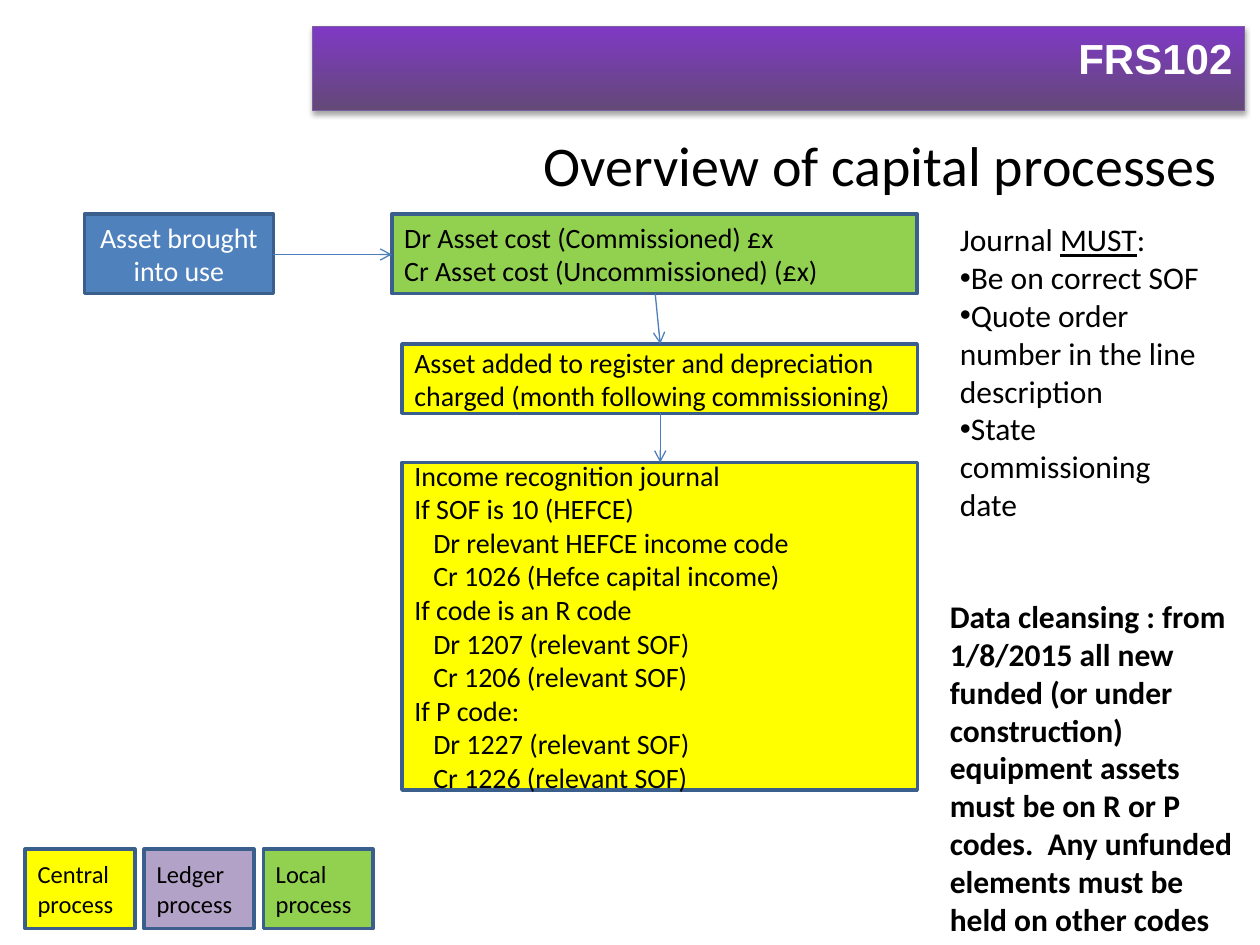
from dataclasses import dataclass

from lxml.etree import SubElement
from pptx import Presentation
from pptx.dml.color import RGBColor
from pptx.enum.shapes import MSO_CONNECTOR as Connector, MSO_SHAPE as Shape
from pptx.enum.text import MSO_ANCHOR as Anchor, PP_ALIGN as Align
from pptx.oxml.ns import qn
from pptx.util import Inches, Pt

BLACK = RGBColor(0x00, 0x00, 0x00)
WHITE = RGBColor(0xFF, 0xFF, 0xFF)
BLUE = RGBColor(0x4F, 0x81, 0xBD)
GREEN = RGBColor(0x92, 0xD0, 0x50)
YELLOW = RGBColor(0xFF, 0xFF, 0x00)
LILAC = RGBColor(0xB3, 0xA2, 0xC7)
OUTLINE = RGBColor(0x3A, 0x5F, 0x8C)
ARROW = RGBColor(0x4B, 0x7E, 0xBC)
BANNER_TOP = RGBColor(0x7F, 0x39, 0xC5)
BANNER_BOTTOM = RGBColor(0x63, 0x49, 0x77)
BANNER_LINE = RGBColor(0x7D, 0x60, 0xA0)

ENTRY_INDENT = Inches(0.15)


@dataclass
class Process:
    left: float
    top: float
    width: float
    height: float
    fill: RGBColor
    lines: list[str]
    size: int = 16
    color: RGBColor = BLACK
    align: Align = Align.LEFT
    entries: tuple[str, ...] = ()  # prefixes of the indented lines


@dataclass
class Arrow:
    start: tuple[float, float]
    end: tuple[float, float]


JOURNAL = [
    "Income recognition journal",
    "If SOF is 10 (HEFCE)",
    "Dr relevant HEFCE income code",
    "Cr 1026 (Hefce capital income)",
    "If code is an R code",
    "Dr 1207 (relevant SOF)",
    "Cr 1206 (relevant SOF)",
    "If P code:",
    "Dr 1227 (relevant SOF)",
    "Cr 1226 (relevant SOF)",
]
PROCESSES = [
    Process(0.67, 1.7, 1.5, 0.63, BLUE, ["Asset brought into use"],
            color=WHITE, align=Align.CENTER),
    Process(3.11, 1.7, 4.17, 0.63, GREEN,
            ["Dr Asset cost (Commissioned) £x", "Cr Asset cost (Uncommissioned) (£x)"]),
    Process(3.19, 2.73, 4.09, 0.55, YELLOW,
            ["Asset added to register and depreciation charged (month following commissioning)"]),
    Process(3.19, 3.67, 4.09, 2.6, YELLOW, JOURNAL, entries=("Dr", "Cr")),
]
KEY = [("Central process", YELLOW), ("Ledger process", LILAC), ("Local process", GREEN)]
ARROWS = [
    Arrow((2.17, 2.02), (3.11, 2.02)),
    Arrow((5.2, 2.33), (5.24, 2.73)),
    Arrow((5.24, 3.28), (5.24, 3.67)),
]
JOURNAL_RULES = [
    "Be on correct SOF",
    "Quote order number in the line description",
    "State commissioning date",
]
DATA_CLEANSING = (
    "Data cleansing : from 1/8/2015 all new funded (or under construction) "
    "equipment assets must be on R or P codes.  Any unfunded elements must be "
    "held on other codes"
)


def style(font, size: int, color: RGBColor = BLACK, name: str = "Calibri", bold: bool = False):
    font.size, font.name, font.bold = Pt(size), name, bold
    font.color.rgb = color


def add_banner(page):
    banner = page.shapes.add_shape(
        Shape.RECTANGLE, Inches(2.48), Inches(0.21), Inches(7.4), Inches(0.67))
    banner.fill.gradient()
    banner.fill.gradient_angle = 90
    for stop, color in zip(banner.fill.gradient_stops, (BANNER_BOTTOM, BANNER_TOP)):
        stop.color.rgb = color
    banner.line.color.rgb, banner.line.width = BANNER_LINE, Pt(0.75)

    banner.shadow.inherit = False
    effects = banner._element.spPr.find(qn("a:effectLst"))
    shadow = SubElement(effects, qn("a:outerShdw"), blurRad=str(Pt(3.1)),
                        dist=str(Pt(1.8)), dir="5400000", rotWithShape="0")
    shade = SubElement(shadow, qn("a:srgbClr"), val="000000")
    SubElement(shade, qn("a:alpha"), val="35000")

    banner.text_frame.text = "FRS102"
    banner.text_frame.vertical_anchor = Anchor.TOP
    para = banner.text_frame.paragraphs[0]
    para.alignment = Align.RIGHT
    style(para.runs[0].font, 24, WHITE, "Arial", bold=True)


def add_process(page, process: Process):
    box = page.shapes.add_shape(
        Shape.FLOWCHART_PROCESS, Inches(process.left), Inches(process.top),
        Inches(process.width), Inches(process.height))
    box.shadow.inherit = False
    box.fill.solid()
    box.fill.fore_color.rgb = process.fill
    box.line.color.rgb, box.line.width = OUTLINE, Pt(2)
    frame = box.text_frame
    frame.text = "\n".join(process.lines)
    frame.word_wrap, frame.vertical_anchor = True, Anchor.MIDDLE
    for para in frame.paragraphs:
        para.alignment = process.align
        if process.entries and para.text.startswith(process.entries):
            para._p.get_or_add_pPr().set("marL", str(ENTRY_INDENT))
        style(para.runs[0].font, process.size, process.color)


def add_arrow(page, arrow: Arrow):
    x1, y1, x2, y2 = map(Inches, arrow.start + arrow.end)
    line = page.shapes.add_connector(Connector.STRAIGHT, x1, y1, x2, y2)
    line.line.color.rgb, line.line.width = ARROW, Pt(0.75)
    SubElement(line.line._get_or_add_ln(), qn("a:tailEnd"), type="arrow")
    SubElement(line._element.spPr, qn("a:effectLst"))


def add_text(page, left: float, top: float, width: float, height: float,
             text: str, size: int, bold: bool = False):
    box = page.shapes.add_textbox(Inches(left), Inches(top), Inches(width), Inches(height))
    frame = box.text_frame
    frame.word_wrap = True
    frame.text = text
    style(frame.paragraphs[0].runs[0].font, size, bold=bold)
    return frame


def add_journal_rules(page):
    frame = add_text(page, 7.52, 1.7, 2.2, 2.52, "Journal ", 18)
    for text, underlined in (("MUST", True), (":", False)):
        span = frame.paragraphs[0].add_run()
        span.text = text
        style(span.font, 18)
        span.font.underline = underlined
    for rule in JOURNAL_RULES:
        para = frame.add_paragraph()
        para.text = rule
        properties = para._p.get_or_add_pPr()
        SubElement(properties, qn("a:buFont"), typeface="Arial")
        SubElement(properties, qn("a:buChar"), char="•")
        style(para.runs[0].font, 18)


def main():
    deck = Presentation()
    deck.slide_width, deck.slide_height = Inches(10), Inches(7.5)
    page = deck.slides.add_slide(deck.slide_layouts[6])

    add_banner(page)
    title = add_text(page, 3.98, 0.84, 6.02, 0.93, "Overview of capital processes", 32)
    title.vertical_anchor = Anchor.MIDDLE
    title.paragraphs[0].alignment = Align.CENTER

    for process in PROCESSES:
        add_process(page, process)
    for index, (label, fill) in enumerate(KEY):
        add_process(page, Process(0.2 + 0.945 * index, 6.74, 0.87, 0.63, fill, [label], 14))
    for arrow in ARROWS:
        add_arrow(page, arrow)

    add_journal_rules(page)
    add_text(page, 7.44, 4.69, 2.56, 2.83, DATA_CLEANSING, 18, bold=True)
    deck.save("out.pptx")


if __name__ == "__main__":
    main()
